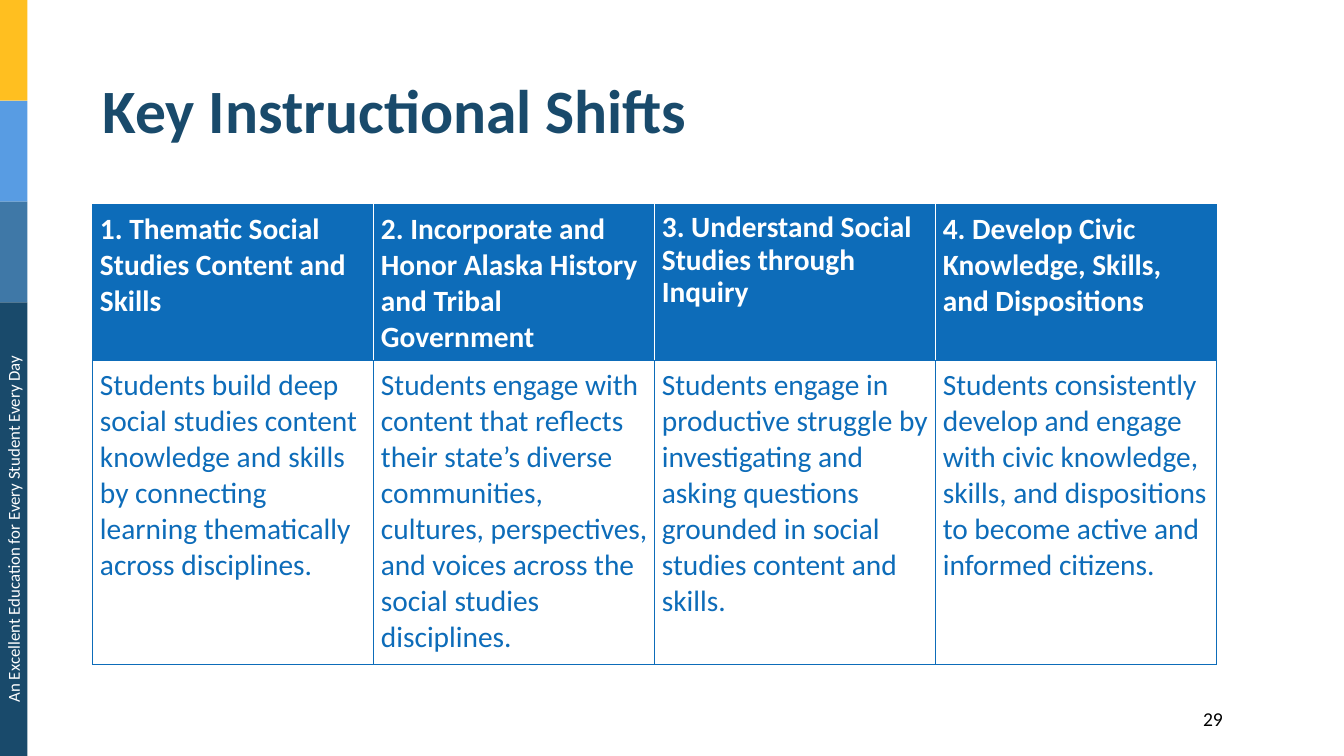
"""Build the Key Instructional Shifts slide with its four-column table."""
from lxml import etree
from pptx import Presentation
from pptx.dml.color import RGBColor
from pptx.enum.shapes import MSO_SHAPE
from pptx.enum.text import MSO_ANCHOR, PP_ALIGN
from pptx.oxml.ns import qn
from pptx.util import Cm, Pt

NAVY, BLUE, WHITE, BLACK = "194A6B", "0D6CB9", "FFFFFF", "000000"


def color(hex_code):
    return RGBColor.from_string(hex_code)


def write(frame, text, size, hex_code, bold=False, align=PP_ALIGN.LEFT, spacing=None):
    frame.text = text
    frame.word_wrap = True
    paragraph = frame.paragraphs[0]
    paragraph.alignment = align
    paragraph.line_spacing = spacing
    font = paragraph.runs[0].font
    font.name, font.size, font.bold = "Calibri", Pt(size), bold
    font.color.rgb = color(hex_code)


prs = Presentation()
prs.slide_width, prs.slide_height = Cm(33.87), Cm(19.05)
slide = prs.slides.add_slide(prs.slide_layouts[6])
shapes = slide.shapes

page_number = shapes.add_textbox(Cm(28.91), Cm(17.68), Cm(2.16), Cm(0.86))
write(page_number.text_frame, "29", 14, BLACK, align=PP_ALIGN.RIGHT)

bands = [("FFBF20", 2.54), ("589CE3", 2.54), ("3F78A7", 2.54), (NAVY, 11.43)]
band_top = 0
for fill, height in bands:
    band = shapes.add_shape(MSO_SHAPE.RECTANGLE, 0, Cm(band_top), Cm(0.69), Cm(height))
    band.shadow.inherit = False
    band.fill.solid()
    band.fill.fore_color.rgb = color(fill)
    band.line.fill.background()
    band_top += height

motto = shapes.add_textbox(Cm(-5.38), Cm(12.95), Cm(11.43), Cm(0.76))
motto.rotation = 270
write(motto.text_frame, "An Excellent Education for Every Student Every Day", 12, WHITE,
      align=PP_ALIGN.CENTER)

title = shapes.add_textbox(Cm(2.34), Cm(1.02), Cm(29.21), Cm(3.68))
title.text_frame.vertical_anchor = MSO_ANCHOR.MIDDLE
write(title.text_frame, "Key Instructional Shifts", 44, NAVY, bold=True, spacing=0.9)

shifts = [
    ("1. Thematic Social Studies Content and Skills",
     "Students build deep social studies content knowledge and skills by connecting "
     "learning thematically across disciplines.", None),
    ("2. Incorporate and Honor Alaska History and Tribal Government",
     "Students engage with content that reflects their state’s diverse communities, "
     "cultures, perspectives, and voices across the social studies disciplines.", None),
    ("3. Understand Social Studies through Inquiry",
     "Students engage in productive struggle by investigating and asking questions "
     "grounded in social studies content and skills.", 0.9),
    ("4. Develop Civic Knowledge, Skills, and Dispositions",
     "Students consistently develop and engage with civic knowledge, skills, and "
     "dispositions to become active and informed citizens.", None),
]
row_heights = [3.4, 7.67]
column_width = 7.08
table = shapes.add_table(2, len(shifts), Cm(2.34), Cm(5.16),
                         Cm(column_width * len(shifts)), Cm(sum(row_heights))).table
for row, height in zip(table.rows, row_heights):
    row.height = Cm(height)

for column, (heading, description, heading_spacing) in enumerate(shifts):
    table.columns[column].width = Cm(column_width)
    for row, text in enumerate((heading, description)):
        is_heading = row == 0
        cell = table.cell(row, column)
        write(cell.text_frame, text, 21, WHITE if is_heading else BLUE, bold=is_heading,
              spacing=heading_spacing if is_heading else None)
        cell.margin_left = cell.margin_right = Cm(0.18)
        cell.margin_top = cell.margin_bottom = Cm(0.18)
        borders = {"a:lnL": BLUE, "a:lnR": BLUE, "a:lnT": BLUE, "a:lnB": BLUE}
        if is_heading and column > 0:
            borders["a:lnL"] = WHITE
        if is_heading and column < len(shifts) - 1:
            borders["a:lnR"] = WHITE
        properties = cell._tc.get_or_add_tcPr()
        for side, border_color in borders.items():
            border = etree.SubElement(properties, qn(side), w=str(Pt(0.75)))
            solid = etree.SubElement(border, qn("a:solidFill"))
            etree.SubElement(solid, qn("a:srgbClr"), val=border_color)
        if is_heading:
            cell.fill.solid()
            cell.fill.fore_color.rgb = color(BLUE)
        else:
            cell.fill.background()

prs.save("out.pptx")
